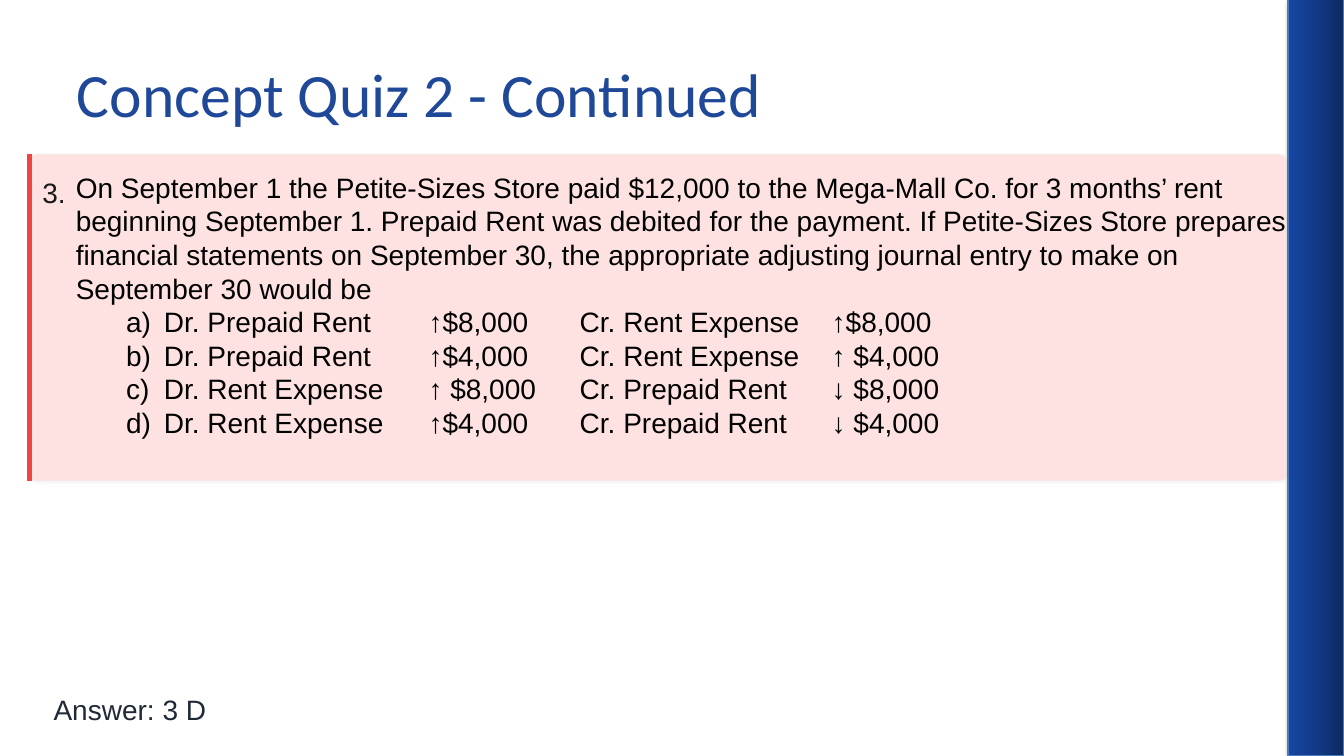
from lxml import etree
from pptx import Presentation
from pptx import util as u
from pptx.dml.color import RGBColor
from pptx.enum import shapes, text
from pptx.oxml import parse_xml
from pptx.oxml.ns import nsdecls, qn

# Content
TITLE = "Concept Quiz 2 - Continued"
NUMBER = "3."
QUESTION = (
    "On September 1 the Petite-Sizes Store paid $12,000 to the Mega-Mall Co. "
    "for 3 months’ rent beginning September 1. Prepaid Rent was debited for the "
    "payment. If Petite-Sizes Store prepares financial statements on September 30, "
    "the appropriate adjusting journal entry to make on September 30 would be"
)
CHOICES = [
    ("Dr. Prepaid Rent", "↑$8,000", "Cr. Rent Expense", "↑$8,000"),
    ("Dr. Prepaid Rent", "↑$4,000", "Cr. Rent Expense", "↑ $4,000"),
    ("Dr. Rent Expense", "↑ $8,000", "Cr. Prepaid Rent", "↓ $8,000"),
    ("Dr. Rent Expense", "↑$4,000", "Cr. Prepaid Rent", "↓ $4,000"),
]
ANSWER = "Answer: 3 D"

THEME = {
    "title": "1F4899", "number": "1A1A1A", "body": "000000", "answer": "1F2937",
    "card": "FEE2E2", "accent": "EF4444", "edge": "4B7EBC",
    "band": [(0, "0D2960"), (50, "123A89"), (100, "1645A2")],
    "head": "Calibri", "font": "Arial", "big": 44, "size": 20,
}

# Layout in centimetres
WIDE, HIGH = 33.87, 19.05
BAND = 1.41
CARD = (0.74, 3.89, 31.67, 8.22)
TOP = 4.29
TABS = (8.89, 12.7, 19.05)
INDENT, HANG = 2.22, -0.95

deck = Presentation()
deck.slide_width, deck.slide_height = u.Cm(WIDE), u.Cm(HIGH)
slide = deck.slides.add_slide(deck.slide_layouts[6])


def cm(*nums):
    return [u.Cm(n) for n in nums]


def shade(shape, alpha, blur, dist):
    shape.shadow.inherit = False
    glow = shape._element.spPr.find(qn("a:effectLst"))
    glow.append(parse_xml(
        f'<a:outerShdw {nsdecls("a")} blurRad="{u.Pt(blur)}" dist="{u.Pt(dist)}" '
        f'dir="5400000" rotWithShape="0"><a:srgbClr val="000000">'
        f'<a:alpha val="{alpha * 1000}"/></a:srgbClr></a:outerShdw>'))


def style(para, words, color, size=THEME["size"], font=THEME["font"], lead=None):
    run = para.add_run()
    run.text = words
    run.font.size, run.font.name = u.Pt(size), font
    run.font.color.rgb = RGBColor.from_string(color)
    if lead:
        para.line_spacing = u.Pt(lead)
        para.space_after = u.Pt(4)


def write(words, at, color, inset=0, anchor=text.MSO_ANCHOR.TOP, **kind):
    frame = slide.shapes.add_textbox(*cm(*at)).text_frame
    frame.word_wrap = True
    frame.vertical_anchor = anchor
    frame.margin_left = frame.margin_right = u.Cm(inset)
    frame.margin_top = frame.margin_bottom = u.Cm(inset / 2)
    style(frame.paragraphs[0], words, color, **kind)
    return frame


def letter(para):
    """Give a choice its a) b) c) number and its tab stops."""
    props = para._p.get_or_add_pPr()
    props.set("marL", str(u.Cm(INDENT)))
    props.set("indent", str(u.Cm(HANG)))
    etree.SubElement(props, qn("a:buFont"), typeface="+mj-lt")
    etree.SubElement(props, qn("a:buAutoNum"), type="alphaLcParenR")
    stops = etree.SubElement(props, qn("a:tabLst"))
    for stop in TABS:
        etree.SubElement(stops, qn("a:tab"), pos=str(u.Cm(stop)), algn="l")


# Blue band on the right
band = slide.shapes.add_shape(
    shapes.MSO_SHAPE.RECTANGLE, *cm(WIDE - BAND, 0, BAND, HIGH))
stops = "".join(f'<a:gs pos="{at * 1000}"><a:srgbClr val="{tint}"/></a:gs>'
                for at, tint in THEME["band"])
band._element.spPr.find(qn("a:prstGeom")).addnext(parse_xml(
    f'<a:gradFill {nsdecls("a")} rotWithShape="1"><a:gsLst>{stops}</a:gsLst>'
    '<a:lin ang="10800000" scaled="0"/></a:gradFill>'))
band.line.color.rgb = RGBColor.from_string(THEME["edge"])
band.line.width = u.Pt(0.75)
shade(band, 35, 3.1, 1.8)

# Title
write(TITLE, (1.69, 0.76, 30.48, 3.18), THEME["title"], inset=0.25,
      anchor=text.MSO_ANCHOR.MIDDLE, size=THEME["big"], font=THEME["head"])

# Question card with its red edge
card = slide.shapes.add_shape(shapes.MSO_SHAPE.ROUNDED_RECTANGLE, *cm(*CARD))
card.adjustments[0] = 0.02
card.fill.solid()
card.fill.fore_color.rgb = RGBColor.from_string(THEME["card"])
card.line.fill.background()
shade(card, 8, 1.5, 0.8)

left, top, _, tall = CARD
edge = slide.shapes.add_connector(
    shapes.MSO_CONNECTOR.STRAIGHT, *cm(left, top, left, top + tall))
edge.line.color.rgb = RGBColor.from_string(THEME["accent"])
edge.line.width = u.Pt(3.75)
etree.SubElement(edge._element.spPr, qn("a:effectLst"))

# Question and choices
write(NUMBER, (1.07, TOP, 0.61, 1.35), THEME["number"], lead=28)
quiz = write(QUESTION, (1.91, TOP, 30.84, 7.21), THEME["body"])
for choice in CHOICES:
    para = quiz.add_paragraph()
    letter(para)
    style(para, "\t".join(choice), THEME["body"])

# Answer
write(ANSWER, (1.35, 17.32, 30.84, 0.99), THEME["answer"], lead=28)

deck.save("out.pptx")
